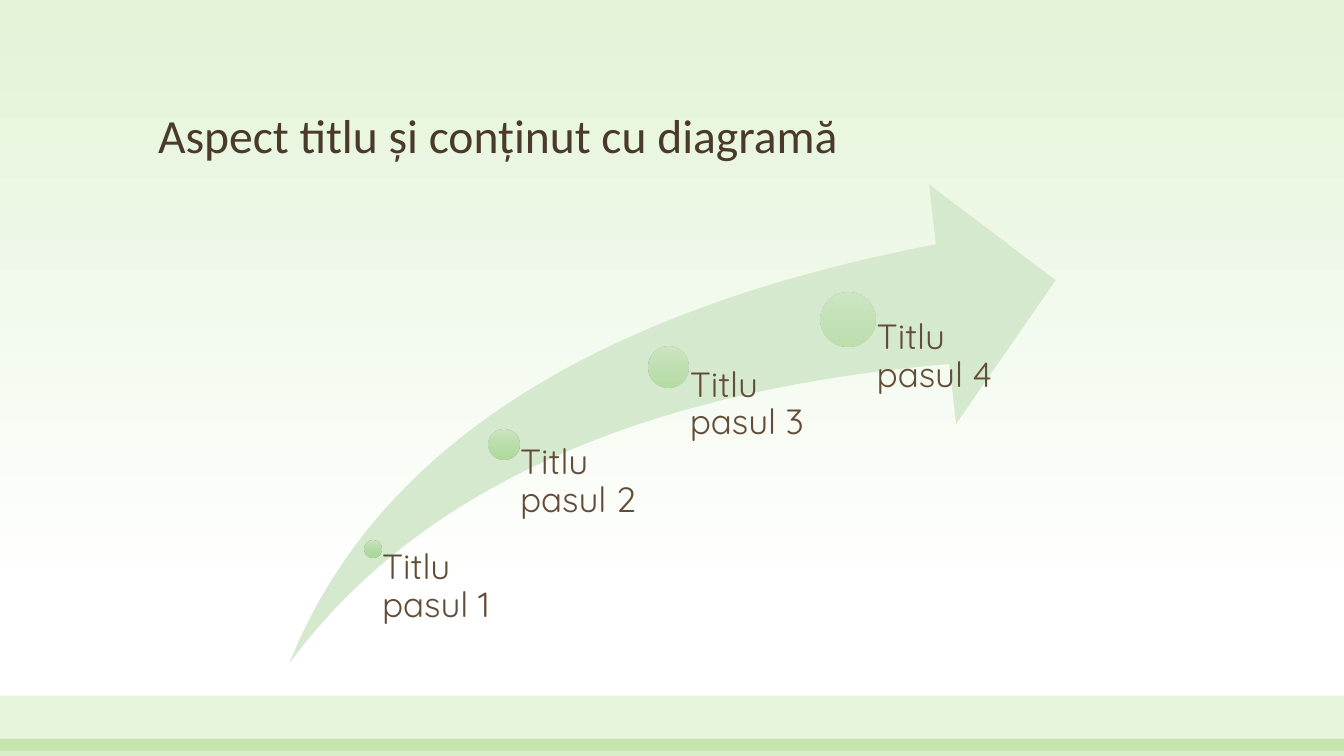
from dataclasses import dataclass

from lxml import etree
from pptx import Presentation
from pptx.dml.color import RGBColor
from pptx.enum.shapes import MSO_SHAPE
from pptx.enum.text import MSO_ANCHOR
from pptx.oxml.ns import qn
from pptx.shapes.autoshape import Shape
from pptx.slide import Slide
from pptx.util import Inches, Pt

RECTANGLE = MSO_SHAPE.RECTANGLE
ELLIPSE = MSO_SHAPE.OVAL
SWOOSH = MSO_SHAPE.SWOOSH_ARROW
TOP = MSO_ANCHOR.TOP
BOTTOM = MSO_ANCHOR.BOTTOM

SLIDE_WIDTH = 13.33
SLIDE_HEIGHT = 7.5
ARROW_BOTTOM = 6.58
LABEL_INDENT = 0.53
FIRST_OPACITY = 90
LAST_OPACITY = 50


@dataclass(frozen=True)
class Theme:
    sky: tuple = ((0, "E3F3D8"), (79, "FFFFFF"))
    marker: tuple = ((0, "C8E5BC"), (50, "B3DBA2"), (100, "A4D78D"))
    ground: str = "72C23C"
    arrow: str = "D5E9CE"
    title_color: str = "4A3A2A"
    label_color: str = "624D38"
    title_font: str = "Calibri"
    label_font: str = "Quicksand"
    title_size: int = 34
    label_size: int = 25


@dataclass(frozen=True)
class Box:
    left: float
    top: float
    width: float
    height: float

    def lengths(self) -> tuple:
        return tuple(Inches(n) for n in (self.left, self.top, self.width, self.height))


@dataclass(frozen=True)
class Band:
    top: float
    height: float
    opacity: int


@dataclass(frozen=True)
class Step:
    title: str
    center_x: float
    center_y: float
    diameter: float
    label_width: float


@dataclass(frozen=True)
class TextStyle:
    font: str
    size: int
    color: str
    anchor: MSO_ANCHOR


THEME = Theme()
TITLE_STYLE = TextStyle(THEME.title_font, THEME.title_size, THEME.title_color, BOTTOM)
LABEL_STYLE = TextStyle(THEME.label_font, THEME.label_size, THEME.label_color, TOP)
BANDS = (Band(6.9, 0.55, 17), Band(7.33, 0.17, 28))
STEPS = (
    Step("Titlu pasul 1", 3.7, 5.45, 0.17, 1.3),
    Step("Titlu pasul 2", 5, 4.41, 0.3, 1.6),
    Step("Titlu pasul 3", 6.63, 3.64, 0.4, 1.6),
    Step("Titlu pasul 4", 8.41, 3.17, 0.54, 1.6),
)


def set_opacity(color: etree._Element, opacity: float) -> None:
    etree.SubElement(color, qn("a:alpha"), val=str(round(opacity * 1000)))


def fill_gradient(target: Shape | Slide, stops: tuple, opacity: float = 100) -> None:
    fill = target.background.fill if isinstance(target, Slide) else target.fill
    fill.gradient()
    fill.gradient_angle = 270
    stop_list = next(target.element.iter(qn("a:gsLst")))
    for default_stop in list(stop_list):
        stop_list.remove(default_stop)
    for position, rgb in stops:
        stop = etree.SubElement(stop_list, qn("a:gs"), pos=str(position * 1000))
        color = etree.SubElement(stop, qn("a:srgbClr"), val=rgb)
        if opacity < 100:
            set_opacity(color, opacity)


def add_plain_shape(slide: Slide, preset: MSO_SHAPE, box: Box) -> Shape:
    shape = slide.shapes.add_shape(preset, *box.lengths())
    shape.shadow.inherit = False
    shape.line.fill.background()
    return shape


def fill_solid(shape: Shape, rgb: str, opacity: float = 100) -> None:
    shape.fill.solid()
    shape.fill.fore_color.rgb = RGBColor.from_string(rgb)
    if opacity < 100:
        set_opacity(next(shape.element.spPr.iter(qn("a:srgbClr"))), opacity)


def add_text(slide: Slide, text: str, box: Box, style: TextStyle) -> Shape:
    text_box = slide.shapes.add_textbox(*box.lengths())
    frame = text_box.text_frame
    frame.text = text
    frame.word_wrap = True
    frame.vertical_anchor = style.anchor
    paragraph = frame.paragraphs[0]
    paragraph.line_spacing = 0.9
    font = paragraph.runs[0].font
    font.name = style.font
    font.size = Pt(style.size)
    font.color.rgb = RGBColor.from_string(style.color)
    return text_box


def add_band(slide: Slide, band: Band) -> None:
    strip = add_plain_shape(slide, RECTANGLE, Box(0, band.top, SLIDE_WIDTH, band.height))
    fill_solid(strip, THEME.ground, band.opacity)


def add_arrow(slide: Slide) -> None:
    arrow = add_plain_shape(slide, SWOOSH, Box(2.87, 1.83, 7.6, 4.75))
    arrow.adjustments[0] = 0.25
    arrow.adjustments[1] = 0.25
    fill_solid(arrow, THEME.arrow)


def add_step(slide: Slide, step: Step, opacity: float) -> None:
    radius = step.diameter / 2
    marker_box = Box(step.center_x - radius, step.center_y - radius, step.diameter, step.diameter)
    marker = add_plain_shape(slide, ELLIPSE, marker_box)
    fill_gradient(marker, THEME.marker, opacity)

    label_box = Box(step.center_x, step.center_y, step.label_width, ARROW_BOTTOM - step.center_y)
    frame = add_text(slide, step.title, label_box, LABEL_STYLE).text_frame
    frame.margin_left = Inches(step.diameter * LABEL_INDENT)
    frame.margin_top = frame.margin_right = frame.margin_bottom = 0


def main() -> None:
    presentation = Presentation()
    presentation.slide_width = Inches(SLIDE_WIDTH)
    presentation.slide_height = Inches(SLIDE_HEIGHT)
    slide = presentation.slides.add_slide(presentation.slide_layouts[6])

    fill_gradient(slide, THEME.sky)
    for band in BANDS:
        add_band(slide, band)
    add_text(slide, "Aspect titlu și conținut cu diagramă", Box(1.47, 0.48, 10.4, 1.19), TITLE_STYLE)
    add_arrow(slide)
    fade = (FIRST_OPACITY - LAST_OPACITY) / (len(STEPS) - 1)
    for index, step in enumerate(STEPS):
        add_step(slide, step, FIRST_OPACITY - index * fade)

    presentation.save("out.pptx")


if __name__ == "__main__":
    main()
